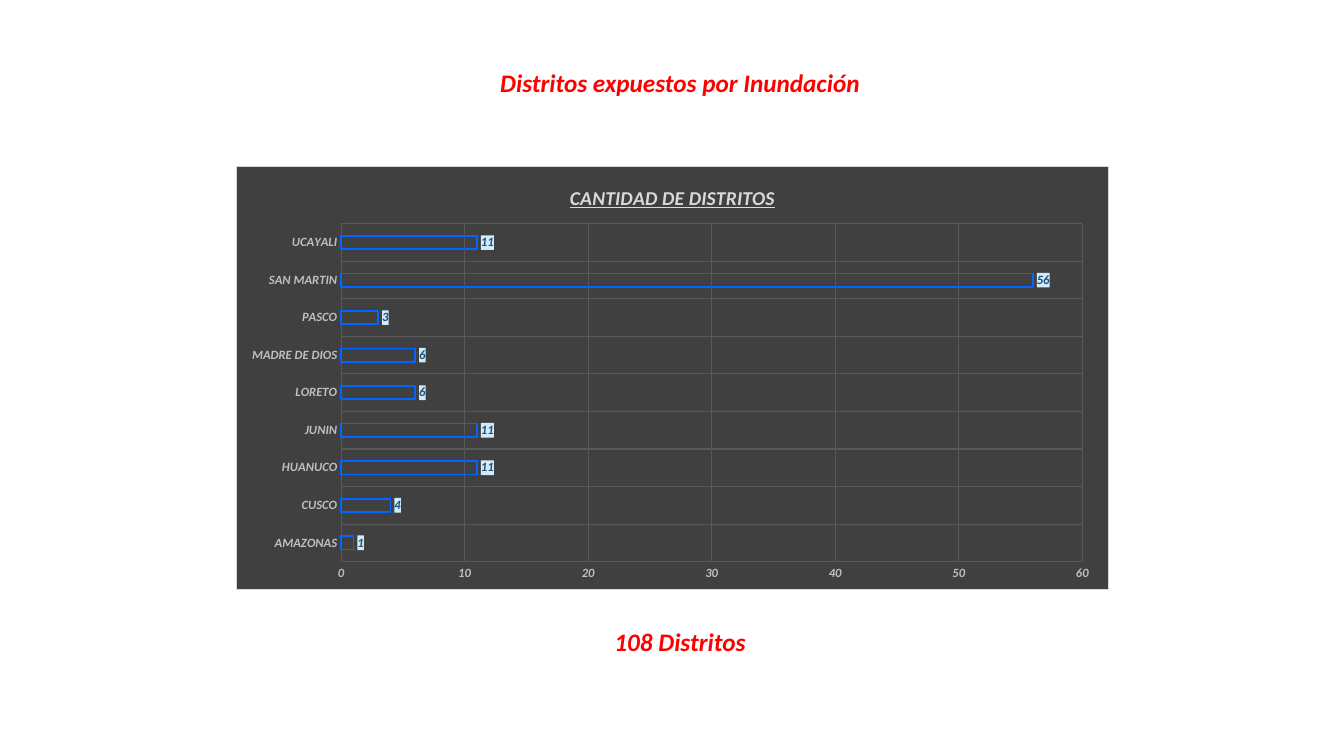
"""Build a slide charting the districts exposed to flooding."""
from lxml import etree
from pptx import Presentation
from pptx.chart.data import CategoryChartData
from pptx.dml.color import RGBColor
from pptx.enum.chart import XL_CHART_TYPE as Kind, XL_LABEL_POSITION as Pos
from pptx.enum.chart import XL_TICK_MARK as Tick
from pptx.enum.text import MSO_AUTO_SIZE as Fit, PP_ALIGN as Align
from pptx.oxml import parse_xml
from pptx.oxml.ns import nsdecls, qn
from pptx.util import Inches, Pt

RED = RGBColor(0xFF, 0x00, 0x00)
BLUE = RGBColor(0x00, 0x66, 0xFF)
NAVY = RGBColor(0x1F, 0x4E, 0x79)
PALE = RGBColor(0xD0, 0xEB, 0xFA)
DARK = RGBColor(0x40, 0x40, 0x40)
GRID = RGBColor(0x59, 0x59, 0x59)
GRAY = RGBColor(0xBF, 0xBF, 0xBF)
LIGHT = RGBColor(0xD9, 0xD9, 0xD9)

NOTES = [
    ("Distritos expuestos por Inundación", (4.84, 0.62, 3.81, 0.4), False),
    ("108 Distritos", (5.99, 6.16, 1.51, 0.4), True),
]
TITLE = "CANTIDAD DE DISTRITOS"
AREA = (2.34, 1.65, 8.66, 4.2)
PLOT = {"x": 0.12, "y": 0.135, "w": 0.85, "h": 0.8}
COUNTS = {
    "AMAZONAS": 1, "CUSCO": 4, "HUANUCO": 11, "JUNIN": 11, "LORETO": 6,
    "MADRE DE DIOS": 6, "PASCO": 3, "SAN MARTIN": 56, "UCAYALI": 11,
}


def style(font, size, color, **more):
    look = {"name": "Calibri", "size": Pt(size), "bold": True, "italic": True}
    for key, value in {**look, **more}.items():
        setattr(font, key, value)
    font.color.rgb = color


def panel(fill, line=None):
    edge = "<a:noFill/>"
    if line:
        edge = f'<a:solidFill><a:srgbClr val="{line}"/></a:solidFill>'
    return parse_xml(
        f'<c:spPr {nsdecls("c", "a")}><a:solidFill><a:srgbClr val="{fill}"/>'
        f'</a:solidFill><a:ln w="{Pt(0.75)}">{edge}</a:ln></c:spPr>')


def place(plot):
    for old in plot.findall(qn("c:layout")):
        plot.remove(old)
    layout = etree.Element(qn("c:layout"))
    manual = etree.SubElement(layout, qn("c:manualLayout"))
    rules = {"layoutTarget": "inner", "xMode": "edge", "yMode": "edge", **PLOT}
    for key, value in rules.items():
        etree.SubElement(manual, qn(f"c:{key}")).set("val", str(value))
    plot.insert(0, layout)


def add_note(slide, text, box, wrap):
    frame = slide.shapes.add_textbox(*map(Inches, box)).text_frame
    frame.word_wrap = wrap
    frame.auto_size = Fit.SHAPE_TO_FIT_TEXT
    para = frame.paragraphs[0]
    para.alignment = Align.CENTER
    run = para.add_run()
    run.text = text
    style(run.font, 18, RED)


def add_bars(slide):
    data = CategoryChartData(number_format="#,##0")
    data.categories = list(COUNTS)
    data.add_series("Distritos", list(COUNTS.values()))
    chart = slide.shapes.add_chart(
        Kind.BAR_CLUSTERED, *map(Inches, AREA), data).chart
    chart.has_legend = False
    style(chart.font, 10, GRAY)

    chart.has_title = True
    para = chart.chart_title.text_frame.paragraphs[0]
    run = para.add_run()
    run.text = TITLE
    style(run.font, 14, LIGHT, underline=True)

    for axis in (chart.category_axis, chart.value_axis):
        axis.major_tick_mark = axis.minor_tick_mark = Tick.NONE
        axis.has_major_gridlines = True
        grid = axis.major_gridlines.format.line
        grid.color.rgb, grid.width = GRID, Pt(0.75)
        axis.format.line.fill.background()
        style(axis.tick_labels.font, 9, GRAY)
    scale = chart.value_axis
    scale.minimum_scale, scale.maximum_scale, scale.major_unit = 0, 60, 10

    plot = chart.plots[0]
    plot.gap_width, plot.overlap, plot.vary_by_categories = 182, -50, False
    bars = plot.series[0]
    bars.format.fill.background()
    bars.format.line.color.rgb = BLUE
    bars.format.line.width = Pt(1.25)
    labels = bars.data_labels
    labels.show_value, labels.position = True, Pos.OUTSIDE_END
    labels.number_format, labels.number_format_is_linked = "#,##0", False
    style(labels.font, 9, NAVY)

    root = chart.element
    tags = root.find(f".//{qn('c:dLbls')}")
    tags.find(qn("c:txPr")).addprevious(panel(PALE))
    root.find(qn("c:chart")).addnext(panel(DARK, LIGHT))
    place(root.find(f".//{qn('c:plotArea')}"))


def main():
    deck = Presentation()
    deck.slide_width, deck.slide_height = Inches(13.33), Inches(7.5)
    slide = deck.slides.add_slide(deck.slide_layouts[6])
    for note in NOTES:
        add_note(slide, *note)
    add_bars(slide)
    deck.save("out.pptx")


if __name__ == "__main__":
    main()
